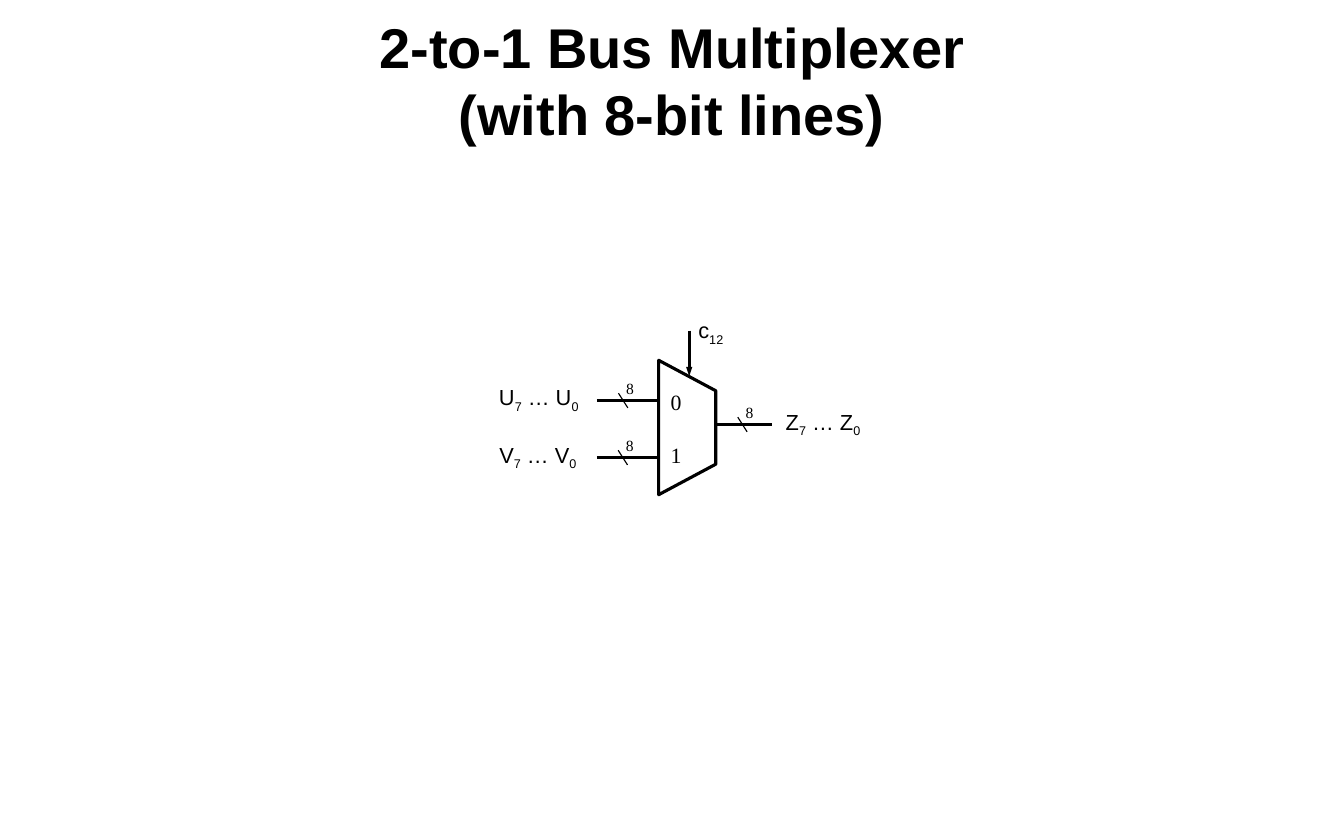
from lxml.etree import SubElement
from pptx import Presentation
from pptx.dml.color import RGBColor
from pptx.enum.shapes import MSO_CONNECTOR, MSO_SHAPE
from pptx.enum.text import MSO_ANCHOR, PP_ALIGN
from pptx.oxml.ns import qn
from pptx.util import Pt

BLACK = RGBColor(0, 0, 0)
WHITE = RGBColor(255, 255, 255)


def add_line(start_x, start_y, end_x, end_y, width):
    line = slide.shapes.add_connector(
        MSO_CONNECTOR.STRAIGHT, Pt(start_x), Pt(start_y), Pt(end_x), Pt(end_y))
    line.line.color.rgb = BLACK
    line.line.width = Pt(width)
    SubElement(line._element.spPr, qn("a:effectLst"))
    return line


def add_text(left, top, width, height, parts, size, font="Arial"):
    """Add a one-paragraph text box; every second part is a subscript."""
    box = slide.shapes.add_textbox(Pt(left), Pt(top), Pt(width), Pt(height))
    paragraph = box.text_frame.paragraphs[0]
    paragraph.font.name = font
    paragraph.font.size = Pt(size)
    paragraph.font.color.rgb = BLACK
    for index, part in enumerate(parts):
        run = paragraph.add_run()
        run.text = part
        if index % 2:
            run.font._element.set("baseline", "-25000")
    box.text_frame.word_wrap = False
    return box


presentation = Presentation()
presentation.slide_width = Pt(864)
presentation.slide_height = Pt(540)
slide = presentation.slides.add_slide(presentation.slide_layouts[6])

# Title
title = add_text(72, 0.72, 720, 95.76, [], 36)
frame = title.text_frame
frame.word_wrap = True
frame.vertical_anchor = MSO_ANCHOR.TOP
frame.margin_top = Pt(7.8)
frame.margin_bottom = Pt(7.2)
paragraph = frame.paragraphs[0]
paragraph.text = "2-to-1 Bus Multiplexer\v(with 8-bit lines)"
paragraph.alignment = PP_ALIGN.CENTER
paragraph.line_spacing = Pt(43)
paragraph.font.bold = True

# Multiplexer body, wide side to the left
multiplexer = slide.shapes.add_shape(
    MSO_SHAPE.TRAPEZOID, Pt(398.6), Pt(256.5), Pt(86.4), Pt(36.7))
multiplexer.rotation = 90
multiplexer.adjustments[0] = 0.534
multiplexer.shadow.inherit = False
multiplexer.fill.solid()
multiplexer.fill.fore_color.rgb = WHITE
multiplexer.line.color.rgb = BLACK
multiplexer.line.width = Pt(2)

# Input numbers inside the body
for number, top in (("0", 246.4), ("1", 280.4)):
    add_text(424, top, 34.5, 23, [number], 14, "Times New Roman")

# Buses: line start, line end, height, slash x, label box, label letter
buses = [
    (383.8, 423.4, 257.5, 397.6, 313.7, 243.4, 67.7, "U"),
    (383.8, 423.4, 294.2, 397.4, 313.9, 280.4, 66.2, "V"),
    (460.5, 496.5, 272.9, 474.3, 498, 259.2, 64.1, "Z"),
]
for start, end, y, slash, label_left, label_top, label_width, letter in buses:
    add_line(start, y, end, y, 2)
    add_line(slash, y - 4.7, slash + 6, y + 4.7, 0.75)
    add_text(slash - 2.1, y - 17.3, 19.4, 19.4, ["8"], 10, "Times New Roman")
    add_text(label_left, label_top, label_width, 24.5,
             [letter, "7", f" … {letter}", "0"], 14)

# Control input
control = add_line(443.1, 212.6, 443.1, 241.9, 1.75)
SubElement(control.line._get_or_add_ln(), qn("a:tailEnd"), type="triangle", w="sm")
add_text(441.8, 200.2, 32.4, 24.5, ["c", "12"], 14)

presentation.save("out.pptx")
